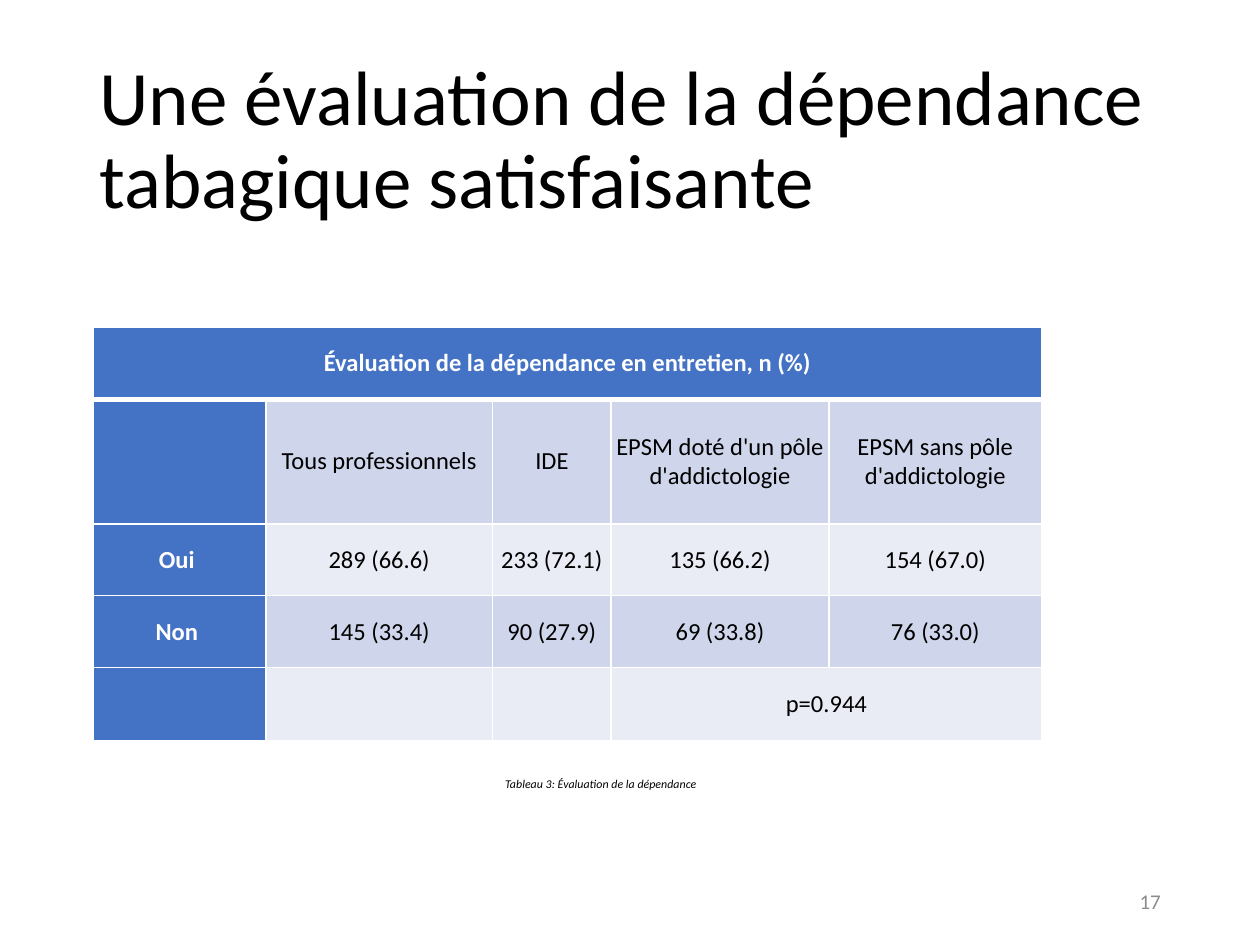
from lxml import etree
from pptx import Presentation
from pptx.dml.color import RGBColor
from pptx.enum.text import MSO_ANCHOR, MSO_AUTO_SIZE, PP_ALIGN
from pptx.oxml.ns import qn
from pptx.util import Cm, Pt

LEFT, CENTER, RIGHT = PP_ALIGN.LEFT, PP_ALIGN.CENTER, PP_ALIGN.RIGHT
MIDDLE = MSO_ANCHOR.MIDDLE
NO_AUTOFIT = MSO_AUTO_SIZE.NONE
TITLE_ONLY = 5

BLACK = RGBColor(0x00, 0x00, 0x00)
WHITE = RGBColor(0xFF, 0xFF, 0xFF)
GREY = RGBColor(0x8C, 0x8C, 0x8C)
BLUE = RGBColor(0x44, 0x72, 0xC4)
BANDS = (RGBColor(0xE9, 0xEB, 0xF5), RGBColor(0xCF, 0xD5, 0xEA))

FONT = "Calibri"
COLUMN_WIDTHS = (3.48, 4.57, 2.39, 4.39, 4.29)
ROW_HEIGHTS = (1.45, 2.51, 1.45, 1.45, 1.47)
ROWS = (
    ("Évaluation de la dépendance en entretien, n (%)", "", "", "", ""),
    ("", "Tous professionnels", "IDE",
     "EPSM doté d'un pôle d'addictologie", "EPSM sans pôle d'addictologie"),
    ("Oui ", "289 (66.6)", "233 (72.1)", "135 (66.2)", "154 (67.0)"),
    ("Non ", "145 (33.4)", "90 (27.9)", "69 (33.8)", "76 (33.0)"),
    ("", "", "", "p=0.944", ""),
)


def write_text(frame, text, size, color=BLACK, align=LEFT, bold=False, italic=False, spacing=1.0):
    """Write one formatted paragraph into a text frame."""
    para = frame.paragraphs[0]
    para.alignment = align
    para.line_spacing = spacing
    span = para.add_run()
    span.text = text
    font = span.font
    font.name, font.size, font.bold, font.italic = FONT, Pt(size), bold, italic
    font.color.rgb = color


def set_borders(cell, bottom):
    """Draw white borders round a cell, with the given bottom width in points."""
    properties = cell._tc.get_or_add_tcPr()
    widths = {"a:lnL": 1, "a:lnR": 1, "a:lnT": 1, "a:lnB": bottom}
    for index, (tag, width) in enumerate(widths.items()):
        line = etree.Element(qn(tag), w=str(Pt(width)))
        fill = etree.SubElement(line, qn("a:solidFill"))
        etree.SubElement(fill, qn("a:srgbClr"), val=str(WHITE))
        properties.insert(index, line)


def place_title(page, box, text):
    """Fit the title placeholder into the box and fill it."""
    title = page.shapes.title
    title.left, title.top, title.width, title.height = box
    frame = title.text_frame
    frame.word_wrap = True
    frame.auto_size = NO_AUTOFIT
    frame.vertical_anchor = MIDDLE
    write_text(frame, text, 44, spacing=0.9)


def place_label(page, box, text, **text_format):
    """Add a wrapped, vertically centred text box."""
    frame = page.shapes.add_textbox(*box).text_frame
    frame.word_wrap = True
    frame.vertical_anchor = MIDDLE
    write_text(frame, text, **text_format)


def place_table(page, box):
    """Add the table of answers inside the box."""
    table = page.shapes.add_table(len(ROWS), len(COLUMN_WIDTHS), *box).table
    for column, width in zip(table.columns, COLUMN_WIDTHS):
        column.width = Cm(width)
    for row, height in zip(table.rows, ROW_HEIGHTS):
        row.height = Cm(height)
    table.cell(0, 0).merge(table.cell(0, 4))
    table.cell(4, 3).merge(table.cell(4, 4))
    for i, texts in enumerate(ROWS):
        for j, text in enumerate(texts):
            cell = table.cell(i, j)
            heading = i == 0 or j == 0
            cell.fill.solid()
            cell.fill.fore_color.rgb = BLUE if heading else BANDS[i % 2]
            cell.vertical_anchor = MIDDLE
            cell.margin_left = cell.margin_right = Cm(0.1)
            cell.margin_top = cell.margin_bottom = 0
            set_borders(cell, bottom=3 if i == 0 else 1)
            if text:
                write_text(cell.text_frame, text, 14, color=WHITE if heading else BLACK,
                           align=CENTER, bold=heading)


def main():
    """Build and save the slide."""
    deck = Presentation()
    deck.slide_width, deck.slide_height = Cm(25.4), Cm(19.05)
    page = deck.slides.add_slide(deck.slide_layouts[TITLE_ONLY])
    place_title(page, (Cm(1.75), Cm(1.02), Cm(21.89), Cm(3.68)),
                "Une évaluation de la dépendance tabagique satisfaisante")
    place_table(page, (Cm(1.88), Cm(6.6), Cm(sum(COLUMN_WIDTHS)), Cm(sum(ROW_HEIGHTS))))
    place_label(page, (Cm(17.93), Cm(17.65), Cm(5.72), Cm(1.02)), "17",
                size=12, color=GREY, align=RIGHT)
    place_label(page, (Cm(0), Cm(15.57), Cm(24.23), Cm(0.48)),
                "Tableau 3: Évaluation de la dépendance", size=6.8, align=CENTER, italic=True)
    deck.save("out.pptx")


if __name__ == "__main__":
    main()
